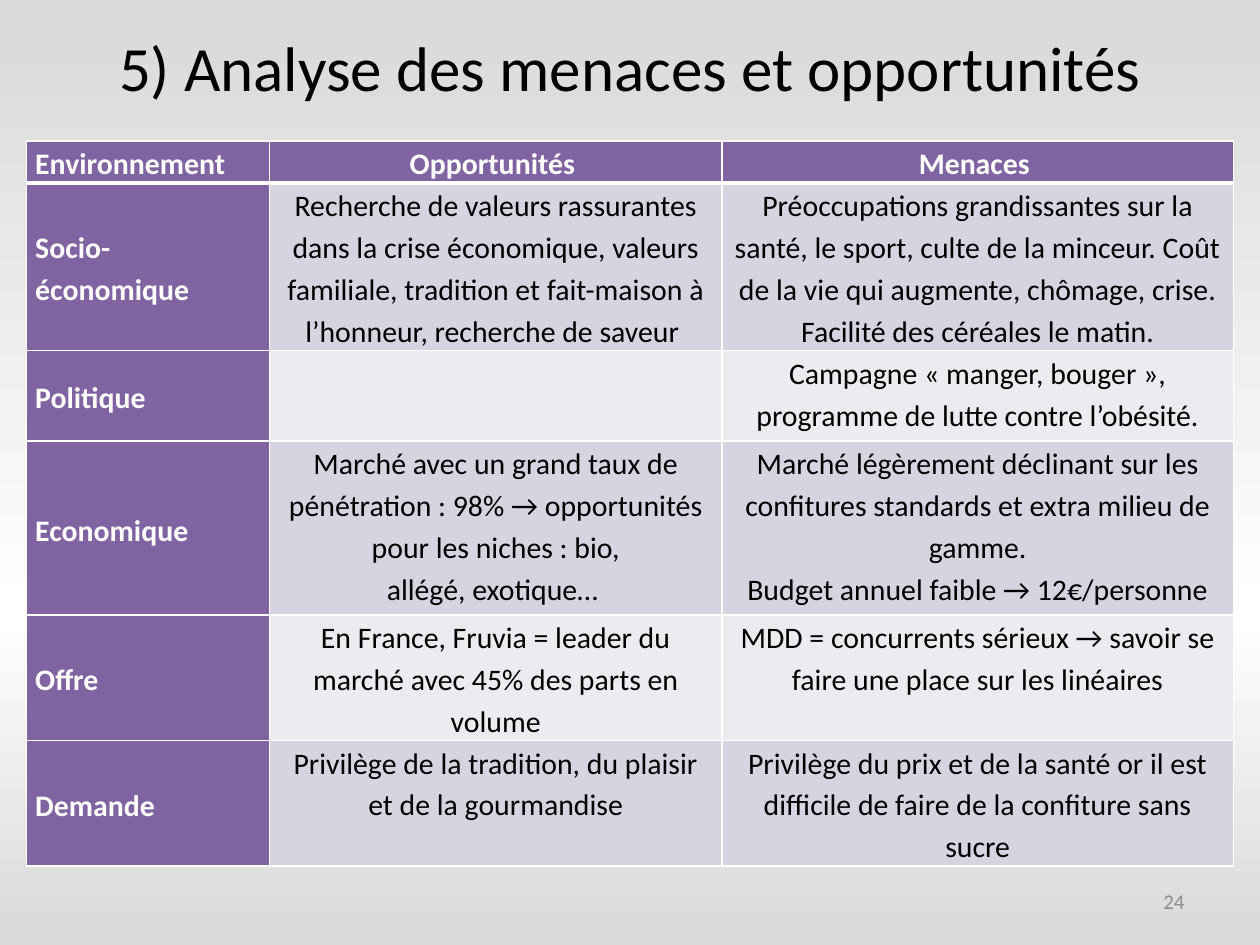
from copy import deepcopy

from lxml import etree
from pptx import Presentation
from pptx import util as u
from pptx.dml.color import RGBColor
from pptx.enum import text
from pptx.oxml.ns import qn

COLOURS = {
    "ink": "000000", "white": "FFFFFF", "grey": "D9D9D9", "number": "8C8C8C",
    "purple": "8064A2", "odd": "D8D3E0", "even": "EDEAF0",
}
FONT = "Calibri"
WIDTH, HEIGHT = u.Inches(10), u.Inches(7.5)
COLUMNS = [1.93, 3.59, 4.06]
ROWS = [0.33, 1.33, 0.72, 1.38, 0.99, 0.99]
HEADINGS = ["Environnement", "Opportunités ", "Menaces "]
ANALYSIS = [
    ("Socio-économique",
     ["Recherche de valeurs rassurantes dans la crise économique, valeurs familiale, "
      "tradition et fait-maison à", "l’honneur, recherche de saveur "],
     ["Préoccupations grandissantes sur la santé, le sport, culte de la minceur. "
      "Coût de la vie qui augmente, chômage, crise. Facilité des céréales le matin."]),
    ("Politique",
     [],
     ["Campagne « manger, bouger »,", " programme de lutte contre l’obésité. "]),
    ("Economique",
     ["Marché avec un grand taux de pénétration : 98% → "
      "opportunités pour les niches : bio,", "allégé, exotique… "],
     ["Marché légèrement déclinant sur les confitures standards et extra milieu de gamme.",
      "Budget annuel faible → 12€/personne"]),
    ("Offre",
     ["En France, Fruvia = leader du marché avec 45% des parts en volume"],
     ["MDD = concurrents sérieux → savoir se faire une place sur les linéaires"]),
    ("Demande",
     ["Privilège de la tradition, du plaisir et de la gourmandise"],
     ["Privilège du prix et de la santé or il est difficile de faire de la confiture sans sucre"]),
]


def colour(name):
    """Return the named colour."""
    return RGBColor.from_string(COLOURS[name])


def format_paragraph(paragraph, size, ink, alignment, bold=False):
    """Set the font and alignment of a paragraph."""
    paragraph.alignment = alignment
    font = paragraph.font
    font.name, font.size, font.bold = FONT, u.Pt(size), bold
    font.color.rgb = colour(ink)


def paint_background(slide):
    """Fill the background with a vertical grey and white gradient."""
    fill = slide.background.fill
    fill.gradient()
    fill.gradient_angle = 270
    stop_list = slide.element.find(".//" + qn("a:gsLst"))
    stop_list.append(deepcopy(stop_list[-1]))
    stops = [(0, "grey"), (0.65, "white"), (1, "grey")]
    for stop, (position, name) in zip(fill.gradient_stops, stops):
        stop.position = position
        stop.color.rgb = colour(name)


def place_title(slide, box):
    """Move and format the title placeholder."""
    title = slide.shapes.title
    title.left, title.top, title.width, title.height = box
    title.text_frame.text = "5) Analyse des menaces et opportunités"
    title.text_frame.vertical_anchor = text.MSO_ANCHOR.MIDDLE
    format_paragraph(title.text_frame.paragraphs[0], 36, "ink", text.PP_ALIGN.CENTER)


def draw_borders(cell, bottom):
    """Draw white borders around a cell, with the given bottom width in points."""
    properties = cell._tc.get_or_add_tcPr()
    for side, points in (("L", 1), ("R", 1), ("T", 1), ("B", bottom)):
        line = etree.SubElement(properties, qn(f"a:ln{side}"), w=str(u.Pt(points)))
        fill = etree.SubElement(line, qn("a:solidFill"))
        etree.SubElement(fill, qn("a:srgbClr"), val=COLOURS["white"])


def fill_cell(cell, paragraphs, row, column):
    """Write and style one cell according to its row and column."""
    header = row == 0 or column == 0
    cell.margin_left = cell.margin_right = u.Inches(0.07)
    cell.margin_top = cell.margin_bottom = 0
    if column == 0:
        cell.vertical_anchor = text.MSO_ANCHOR.MIDDLE
    draw_borders(cell, 3 if row == 0 else 1)
    cell.fill.solid()
    cell.fill.fore_color.rgb = colour("purple" if header else "odd" if row % 2 else "even")
    cell.text_frame.text = "\n".join(paragraphs)
    alignment = text.PP_ALIGN.LEFT if column == 0 else text.PP_ALIGN.CENTER
    for paragraph in cell.text_frame.paragraphs:
        format_paragraph(paragraph, 17, "white" if header else "ink", alignment, header)
        paragraph.line_spacing = 1.15
        if len(paragraphs) == 1:
            paragraph.space_after = u.Pt(3.8)


def place_table(slide, box):
    """Build the analysis table, sharing the box between columns and rows."""
    left, top, width, height = box
    table = slide.shapes.add_table(len(ROWS), len(COLUMNS), *box).table
    for column, share in zip(table.columns, COLUMNS):
        column.width = int(width * share / sum(COLUMNS))
    for row, share in zip(table.rows, ROWS):
        row.height = int(height * share / sum(ROWS))
    contents = [[[heading] for heading in HEADINGS]]
    contents += [[[name], chances, threats] for name, chances, threats in ANALYSIS]
    for row, cells in enumerate(contents):
        for column, paragraphs in enumerate(cells):
            fill_cell(table.cell(row, column), paragraphs, row, column)


def place_number(slide, box):
    """Write the slide number."""
    frame = slide.shapes.add_textbox(*box).text_frame
    frame.word_wrap = True
    frame.vertical_anchor = text.MSO_ANCHOR.MIDDLE
    frame.text = "24"
    format_paragraph(frame.paragraphs[0], 12, "number", text.PP_ALIGN.RIGHT)


def main():
    """Build and save the presentation."""
    presentation = Presentation()
    presentation.slide_width, presentation.slide_height = WIDTH, HEIGHT
    slide = presentation.slides.add_slide(presentation.slide_layouts.get_by_name("Title Only"))
    paint_background(slide)
    place_title(slide, [u.Inches(n) for n in (0.5, 0.1, 9, 0.86)])
    place_table(slide, [u.Inches(n) for n in (0.21, 1.12, sum(COLUMNS), sum(ROWS))])
    place_number(slide, [u.Inches(n) for n in (7.17, 6.95, 2.33, 0.4)])
    presentation.save("out.pptx")


if __name__ == "__main__":
    main()
